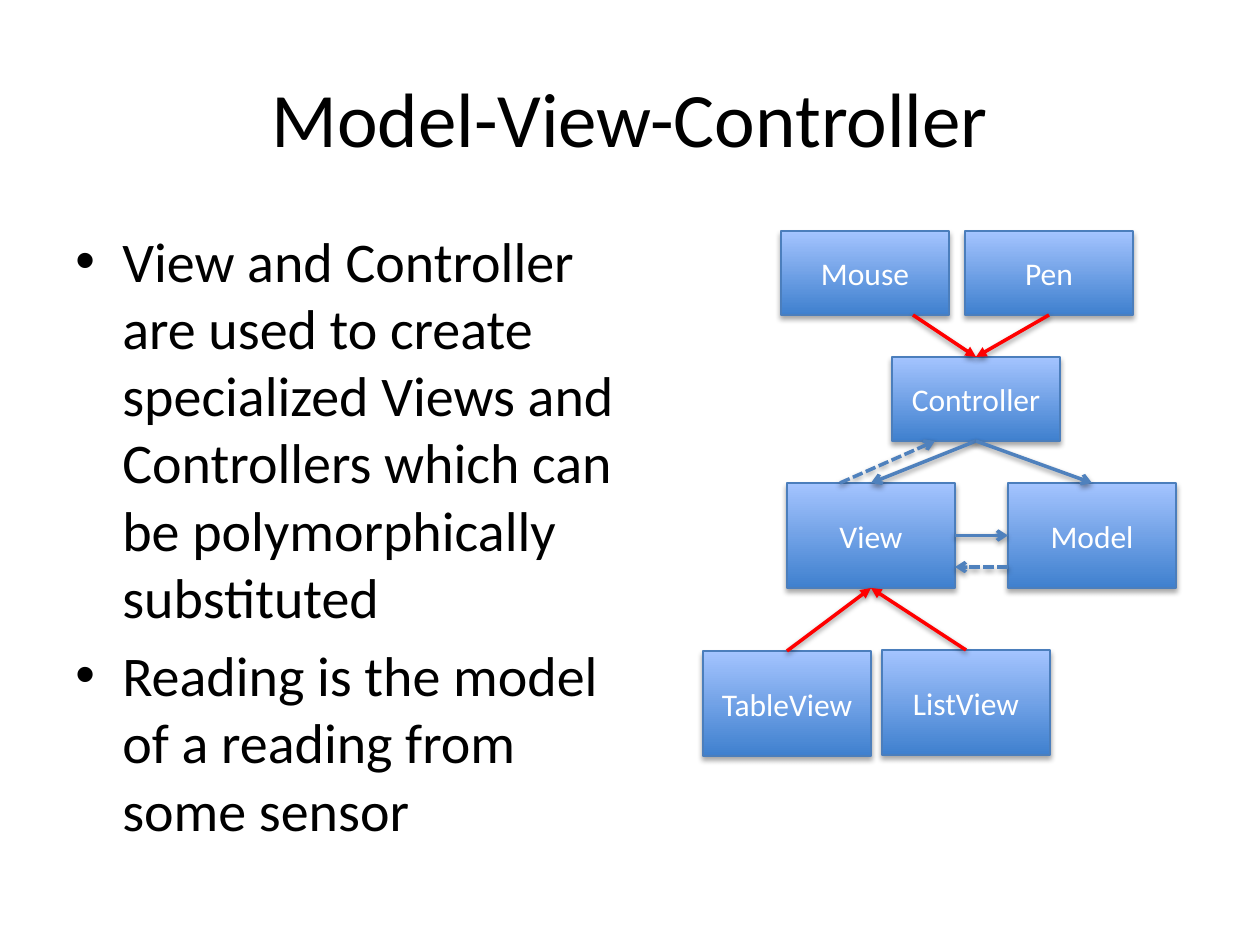
import dataclasses

import lxml.etree
import pptx
import pptx.dml.color
import pptx.enum.dml
import pptx.enum.shapes
import pptx.enum.text
import pptx.oxml
import pptx.oxml.ns
import pptx.util

EMU_PER_PX = 914400 / 126
TOP, LEFT, BOTTOM, RIGHT = range(4)


@dataclasses.dataclass(frozen=True)
class Theme:
    font: str = "Calibri"
    ink: str = "000000"
    box_text: str = "FFFFFF"
    box_dark: str = "3F80CE"
    box_light: str = "A4C4FF"
    box_line: str = "4B7EBC"
    flow: str = "4F81BD"
    inherit: str = "FF0000"
    title_size: int = 44
    body_size: int = 32
    box_size: int = 18


THEME = Theme()


def px(n):
    return pptx.util.Emu(round(n * EMU_PER_PX))


def rgb(value):
    return pptx.dml.color.RGBColor.from_string(value)


def add_xml(parent, tag, **attrs):
    element = lxml.etree.SubElement(parent, pptx.oxml.ns.qn(tag))
    for name, value in attrs.items():
        element.set(name, str(value))
    return element


def write_text(tf, *lines, size, color=THEME.ink, align="LEFT", anchor="MIDDLE",
               bullet=None, indent=0, space_before=0):
    tf.word_wrap = True
    tf.vertical_anchor = pptx.enum.text.MSO_ANCHOR[anchor]
    for i, line in enumerate(lines):
        p = tf.paragraphs[0] if i == 0 else tf.add_paragraph()
        p.alignment = pptx.enum.text.PP_ALIGN[align]
        if i:
            p.space_before = pptx.util.Pt(space_before)
        if bullet:
            pPr = p._p.get_or_add_pPr()
            pPr.set("marL", str(px(indent)))
            pPr.set("indent", str(-px(indent)))
            add_xml(pPr, "a:buFont", typeface="Arial")
            add_xml(pPr, "a:buChar", char=bullet)
        r = p.add_run()
        r.text = line
        r.font.name = THEME.font
        r.font.size = pptx.util.Pt(size)
        r.font.color.rgb = rgb(color)


def add_shadow(s, distance, opacity):
    effects = add_xml(s._element.spPr, "a:effectLst")
    shadow = add_xml(effects, "a:outerShdw", blurRad=pptx.util.Pt(3.1),
                     dist=pptx.util.Pt(distance), dir=90 * 60000, rotWithShape=0)
    color = add_xml(shadow, "a:srgbClr", val="000000")
    add_xml(color, "a:alpha", val=opacity * 1000)


def add_title(slide, box, text):
    s = slide.shapes.title
    s.left, s.top, s.width, s.height = map(px, box)
    write_text(s.text_frame, text, size=THEME.title_size, align="CENTER")


def add_body(slide, box, *lines):
    s = slide.shapes.add_textbox(*map(px, box))
    write_text(s.text_frame, *lines, size=THEME.body_size, anchor="TOP",
               bullet="•", indent=47, space_before=6.4)


def add_class(slide, text, x, y, w, h):
    s = slide.shapes.add_shape(pptx.enum.shapes.MSO_SHAPE.RECTANGLE, px(x), px(y), px(w), px(h))
    s.fill.gradient()
    s.fill.gradient_angle = 90
    for stop, color in zip(s.fill.gradient_stops, (THEME.box_dark, THEME.box_light)):
        stop.color.rgb = rgb(color)
    s.line.color.rgb = rgb(THEME.box_line)
    s.line.width = pptx.util.Pt(0.75)
    add_shadow(s, 1.8, 35)
    write_text(s.text_frame, text, size=THEME.box_size, color=THEME.box_text, align="CENTER")
    return s


def add_arrow(slide, begin=(0, 0), end=(0, 0), begin_at=None, end_at=None,
              color=THEME.flow, head="arrow", dashed=False):
    s = slide.shapes.add_connector(pptx.enum.shapes.MSO_CONNECTOR.STRAIGHT,
                                   *map(px, (*begin, *end)))
    if begin_at:
        s.begin_connect(*begin_at)
    if end_at:
        s.end_connect(*end_at)
    s.line.color.rgb = rgb(color)
    s.line.width = pptx.util.Pt(2)
    if dashed:
        s.line.dash_style = pptx.enum.dml.MSO_LINE.SQUARE_DOT
    add_xml(s.line._get_or_add_ln(), "a:tailEnd", type=head)
    add_shadow(s, 1.6, 38)


def add_diagram(slide, box):
    left, top = box[:2]
    width, short, tall = 168, 84, 105
    layout = (
        ("Mouse", 78, 0, short),
        ("Pen", 262, 0, short),
        ("Controller", 189, 126, short),
        ("View", 84, 252, tall),
        ("Model", 305, 252, tall),
        ("TableView", 0, 420, tall),
        ("ListView", 179, 419, tall),
    )
    boxes = {name: add_class(slide, name, left + x, top + y, width, h)
             for name, x, y, h in layout}

    def at(x, y):
        return left + x, top + y

    for source, side, target, target_side in (
        ("Controller", BOTTOM, "View", TOP),
        ("Controller", BOTTOM, "Model", TOP),
        ("View", RIGHT, "Model", LEFT),
    ):
        add_arrow(slide, begin_at=(boxes[source], side), end_at=(boxes[target], target_side))

    for begin, end in (((305, 336), (252, 336)), ((137, 252), (232, 210))):
        add_arrow(slide, at(*begin), at(*end), dashed=True)

    red = dict(color=THEME.inherit, head="triangle")
    add_arrow(slide, at(210, 84), end_at=(boxes["Controller"], TOP), **red)
    for child, side, parent, parent_side in (
        ("Pen", BOTTOM, "Controller", TOP),
        ("TableView", TOP, "View", BOTTOM),
        ("ListView", TOP, "View", BOTTOM),
    ):
        add_arrow(slide, begin_at=(boxes[child], side),
                  end_at=(boxes[parent], parent_side), **red)


def main():
    prs = pptx.Presentation()
    prs.slide_width, prs.slide_height = px(1260), px(945)
    slide = prs.slides.add_slide(prs.slide_layouts[5])
    add_title(slide, (63, 38, 1134, 157), "Model-View-Controller")
    add_body(slide, (63, 220, 577, 624),
             "View and Controller are used to create specialized Views and Controllers "
             "which can be polymorphically substituted",
             "Reading is the model of a reading from some sensor")
    add_diagram(slide, (703, 231, 473, 525))
    prs.save("out.pptx")


if __name__ == "__main__":
    main()
